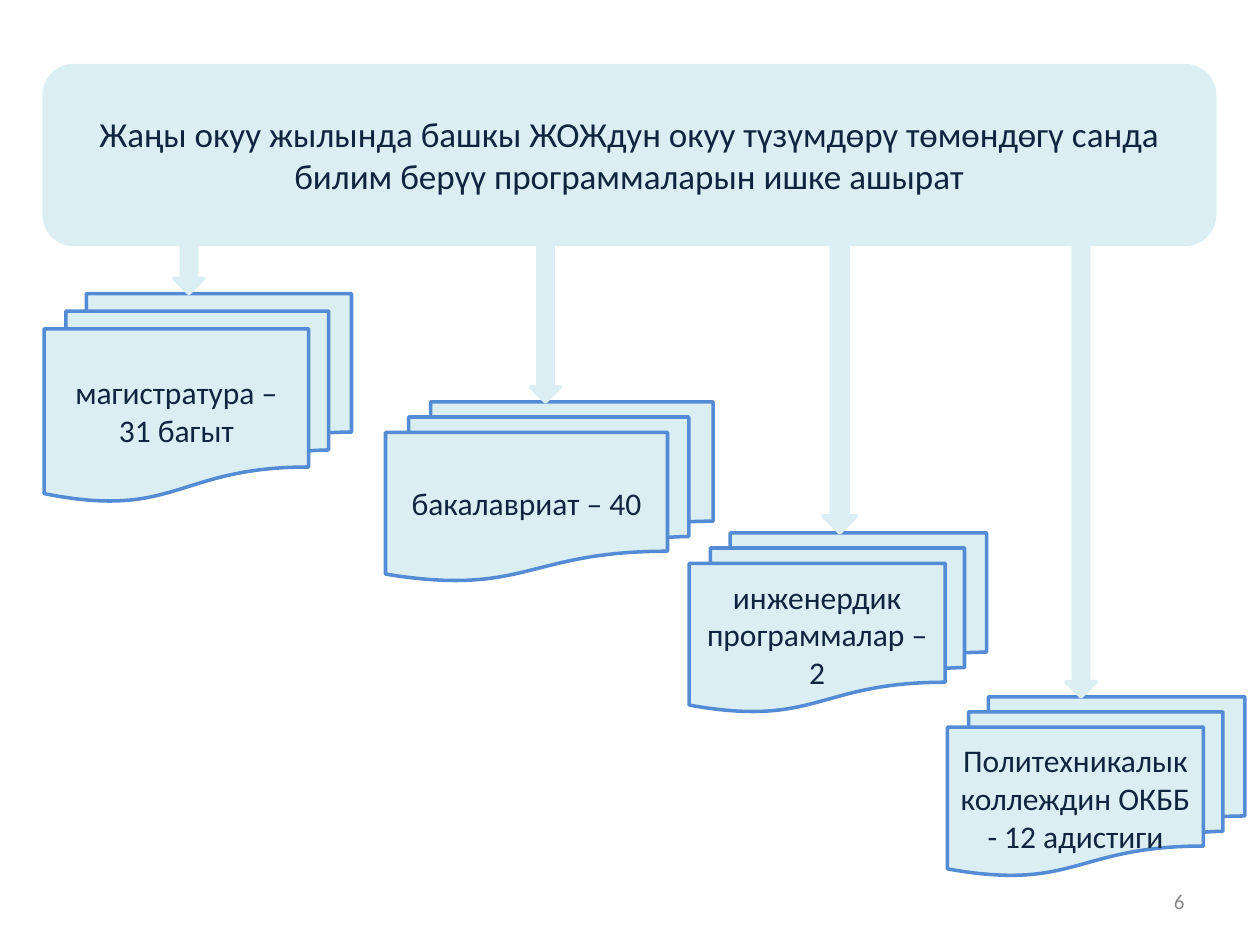
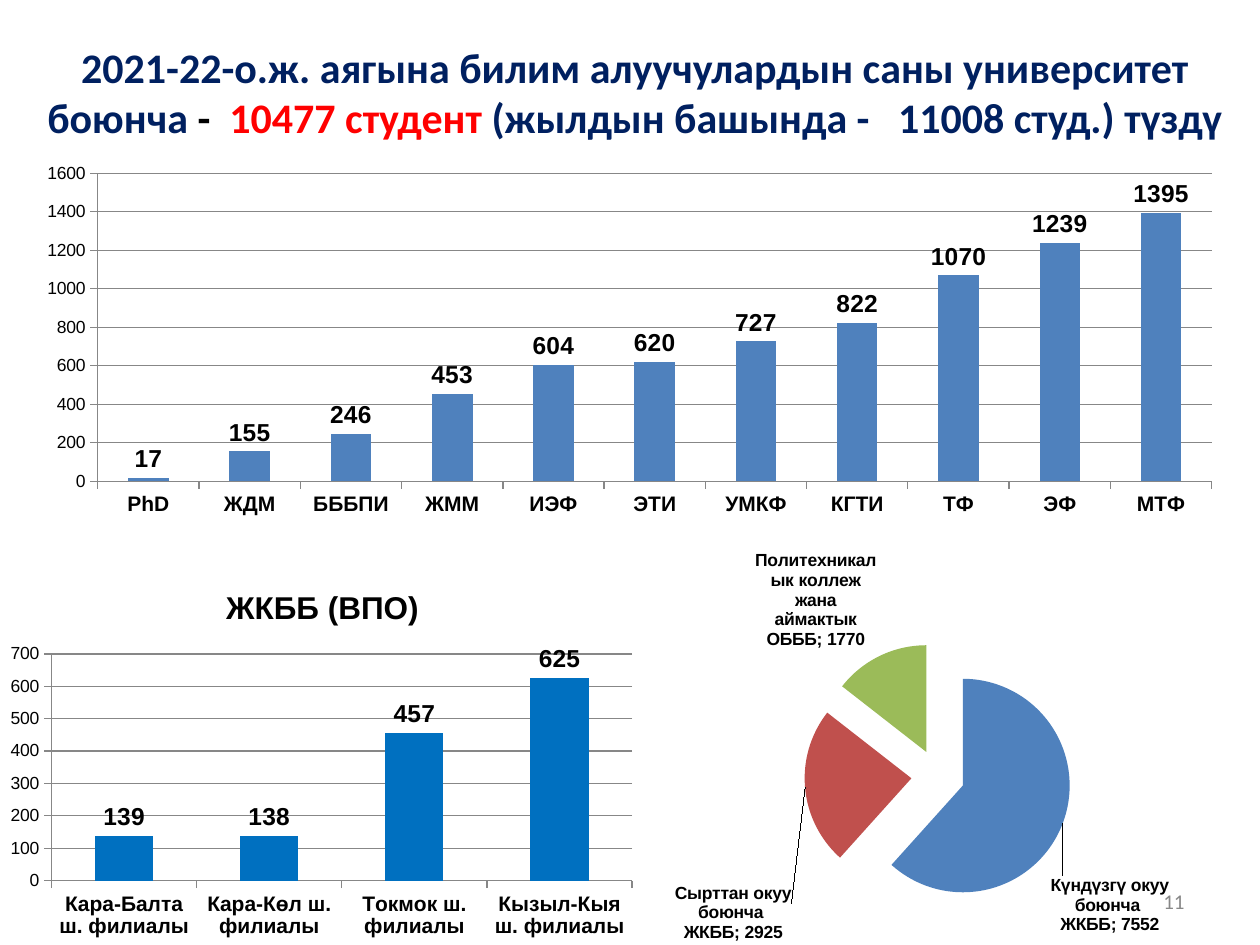
import pptx
import pptx.util
import pptx.dml.color
import pptx.chart.data
import pptx.enum.chart
import pptx.enum.shapes
import pptx.enum.text
import pptx.oxml

Pt = pptx.util.Pt
SHAPE = pptx.enum.shapes.MSO_SHAPE
ALIGN = pptx.enum.text.PP_ALIGN
ANCHOR = pptx.enum.text.MSO_ANCHOR
CHART = pptx.enum.chart.XL_CHART_TYPE
LABEL = pptx.enum.chart.XL_LABEL_POSITION
TICK = pptx.enum.chart.XL_TICK_MARK

# Shared look
PALE, EDGE, INK = "DAEEF3", "538CD5", "0F243E"
NAVY, RED, BLACK, GREY, AXIS = "002060", "FF0000", "000000", "888888", "878787"
BLUE, BRIGHT, BRICK, GREEN = "4F81BD", "0070C0", "C0504D", "9BBB59"
CHART_XMLNS = 'xmlns:c="http://schemas.openxmlformats.org/drawingml/2006/chart"'


def rgb(code):
    return pptx.dml.color.RGBColor.from_string(code)


deck = pptx.Presentation()
deck.slide_width = pptx.util.Inches(10)
deck.slide_height = pptx.util.Inches(7.5)
column = deck.slide_width / 100
row = deck.slide_height / 75


def add_block(page, kind, place, edge=None, text="", size=18):
    """Add a pale shape; place is left, top, width, height in grid units."""
    left, top, width, height = place
    box = page.shapes.add_shape(kind, int(left * column), int(top * row),
                                int(width * column), int(height * row))
    box.shadow.inherit = False
    box.fill.solid()
    box.fill.fore_color.rgb = rgb(PALE)
    box.line.color.rgb = rgb(edge or PALE)
    box.line.width = Pt(2)
    if text:
        box.text_frame.word_wrap = True
        box.text_frame.vertical_anchor = ANCHOR.MIDDLE
        para = box.text_frame.paragraphs[0]
        para.text = text
        para.alignment = ALIGN.CENTER
        para.font.name = "Calibri"
        para.font.size = Pt(size)
        para.font.color.rgb = rgb(INK)


# Both pages with their numbers
pages = []
for number in ("6", "11"):
    page = deck.slides.add_slide(deck.slide_layouts[6])
    pages.append(page)
    box = page.shapes.add_textbox(int(71.7 * column), int(69.5 * row),
                                  int(23.3 * column), int(4 * row))
    box.text_frame.word_wrap = True
    box.text_frame.vertical_anchor = ANCHOR.MIDDLE
    para = box.text_frame.paragraphs[0]
    para.text = number
    para.alignment = ALIGN.RIGHT
    para.font.name = "Calibri"
    para.font.size = Pt(12)
    para.font.color.rgb = rgb(GREY)
programs_page, students_page = pages

# Programmes: banner above a staircase of documents
add_block(programs_page, SHAPE.ROUNDED_RECTANGLE, (3.5, 5.2, 92.9, 14.2),
          text="Жаңы окуу жылында башкы ЖОЖдун окуу түзүмдөрү төмөндөгү санда "
               "билим берүү программаларын ишке ашырат", size=20)

# text, document place, then left, top and width of its arrow
programs = [
    ("магистратура – 31 багыт", (3.5, 23.3, 24.4, 16.5), (13.8, 18.6, 2.4)),
    ("бакалавриат – 40", (30.6, 31.9, 26, 14.2), (42.1, 19.4, 2.4)),
    ("инженердик программалар – 2", (54.7, 42.3, 23.6, 14.2), (65.3, 19.5, 2.7)),
    ("Политехникалык коллеждин ОКББ - 12 адистиги", (75.2, 55.3, 23.6, 14.2),
     (84.6, 19.4, 2.4)),
]
for text, place, arrow in programs:
    add_block(programs_page, SHAPE.FLOWCHART_MULTIDOCUMENT, place, EDGE, text)
for text, place, (left, top, width) in programs:
    add_block(programs_page, SHAPE.DOWN_ARROW, (left, top, width, place[1] - top))

# Students: title with coloured parts
box = students_page.shapes.add_textbox(int(1.2 * column), int(2.8 * row),
                                       int(98.4 * column), int(11 * row))
box.text_frame.word_wrap = True
para = box.text_frame.paragraphs[0]
para.alignment = ALIGN.CENTER
para.space_before = Pt(3)
para.font.name = "Calibri"
para.font.size = Pt(24)
para.font.bold = True
for text, color in [
    ("2021-22-о.ж. аягына билим алуучулардын саны университет боюнча ", NAVY),
    ("-  ", BLACK),
    ("10477 студент ", RED),
    ("(жылдын башында -   11008 студ.) түздү", NAVY),
]:
    span = para.add_run()
    span.text = text
    span.font.color.rgb = rgb(color)

# Students: charts as kind, place, plot area shares, title, colours, values
charts = [
    (CHART.COLUMN_CLUSTERED, (0, 45, 51.2, 30), (0.08, 0.23, 0.9, 0.6),
     "ЖКББ (ВПО)", [BRIGHT],
     {"Кара-Балта ш. филиалы": 139, "Кара-Көл ш. филиалы": 138,
      "Токмок ш. филиалы": 457, "Кызыл-Кыя ш. филиалы": 625}),
    (CHART.PIE, (49.2, 42.2, 50, 32.6), (0.29, 0.27, 0.43, 0.65),
     None, [BLUE, BRICK, GREEN],
     {"Күндүзгү окуу боюнча  ЖКББ": 7552, "Сырттан окуу боюнча  ЖКББ": 2925,
      "Политехникалык коллеж жана аймактык ОБББ": 1770}),
    (CHART.COLUMN_CLUSTERED, (2, 12.3, 96.1, 29.1), (0.06, 0.05, 0.92, 0.84),
     None, [BLUE],
     {"РhD": 17, "ЖДМ": 155, "БББПИ": 246, "ЖММ": 453, "ИЭФ": 604, "ЭТИ": 620,
      "УМКФ": 727, "КГТИ": 822, "ТФ": 1070, "ЭФ": 1239, "МТФ": 1395}),
]
for kind, (left, top, width, height), area, title, colors, values in charts:
    data = pptx.chart.data.CategoryChartData()
    data.categories = list(values)
    data.add_series("Series 1", list(values.values()))
    chart = students_page.shapes.add_chart(
        kind, int(left * column), int(top * row),
        int(width * column), int(height * row), data).chart
    chart.has_legend = False
    chart.font.name = "Arial"
    chart.font.size = Pt(10)
    chart.font.color.rgb = rgb(BLACK)
    chart.has_title = title is not None
    if title:
        para = chart.chart_title.text_frame.paragraphs[0]
        para.text = title
        para.font.size = Pt(18)
        para.font.bold = True

    # Fixed plot area
    plot_area = chart.plots[0]._element.getparent()
    for old in plot_area.findall(pptx.oxml.ns.qn("c:layout")):
        plot_area.remove(old)
    sides = "".join(f'<c:{side} val="{share}"/>' for side, share in zip("xywh", area))
    plot_area.insert(0, pptx.oxml.parse_xml(
        f'<c:layout {CHART_XMLNS}><c:manualLayout><c:layoutTarget val="inner"/>'
        f'<c:xMode val="edge"/><c:yMode val="edge"/>{sides}'
        '</c:manualLayout></c:layout>'))

    plot = chart.plots[0]
    series = plot.series[0]
    labels = series.data_labels
    labels.show_value = True
    labels.font.bold = True
    labels.position = LABEL.OUTSIDE_END

    if kind == CHART.PIE:
        plot.vary_by_categories = True
        labels.font.size = Pt(10)
        labels.show_category_name = True
        for index, color in enumerate(colors):
            fill = series.points[index].format.fill
            fill.solid()
            fill.fore_color.rgb = rgb(color)
        series._element.find(pptx.oxml.ns.qn("c:dPt")).addprevious(
            pptx.oxml.parse_xml(f'<c:explosion {CHART_XMLNS} val="25"/>'))
        # Two labels moved below their slices
        for index, (shift_x, shift_y) in enumerate([(-0.03, 0.12), (-0.01, 0.28)]):
            labels._element.insert(index, pptx.oxml.parse_xml(
                f'<c:dLbl {CHART_XMLNS}><c:idx val="{index}"/>'
                f'<c:layout><c:manualLayout><c:x val="{shift_x}"/>'
                f'<c:y val="{shift_y}"/></c:manualLayout></c:layout>'
                '<c:dLblPos val="outEnd"/><c:showLegendKey val="0"/>'
                '<c:showVal val="1"/><c:showCatName val="1"/>'
                '<c:showSerName val="0"/><c:showPercent val="0"/>'
                '<c:showBubbleSize val="0"/><c:separator>; </c:separator></c:dLbl>'))
        labels._element.find(pptx.oxml.ns.qn("c:showBubbleSize")).addnext(
            pptx.oxml.parse_xml(f'<c:separator {CHART_XMLNS}>; </c:separator>'))
    else:
        plot.vary_by_categories = False
        plot.gap_width = 150
        labels.font.size = Pt(14)
        series.format.fill.solid()
        series.format.fill.fore_color.rgb = rgb(colors[0])
        for axis in (chart.category_axis, chart.value_axis):
            axis.major_tick_mark = TICK.OUTSIDE
            axis.minor_tick_mark = TICK.NONE
            axis.format.line.color.rgb = rgb(AXIS)
        chart.category_axis.tick_labels.font.size = Pt(12)
        chart.category_axis.tick_labels.font.bold = True
        chart.value_axis.has_major_gridlines = True
        chart.value_axis.major_gridlines.format.line.color.rgb = rgb(AXIS)

deck.save("out.pptx")
